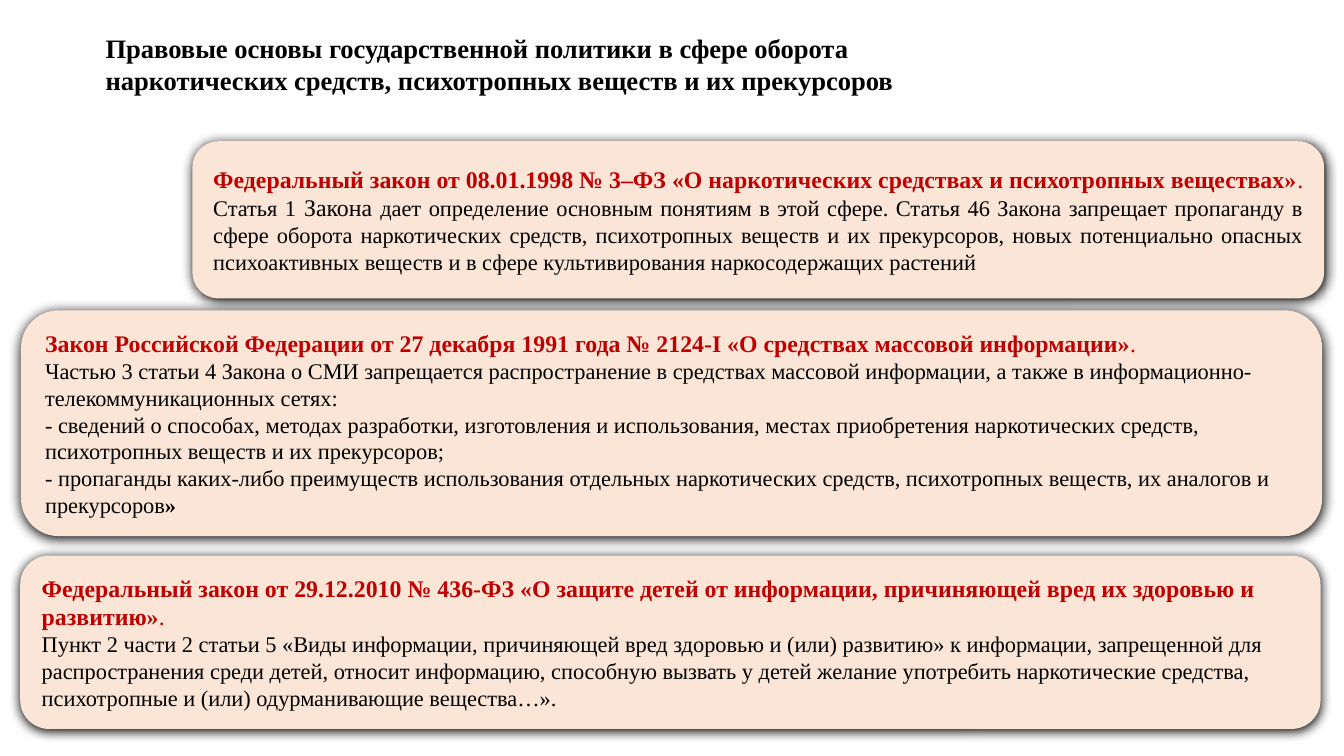
from dataclasses import dataclass

from lxml import etree
from pptx import Presentation
from pptx import util as u
from pptx.dml.color import RGBColor
from pptx.enum import shapes, text
from pptx.oxml import ns

BLACK = RGBColor(0x00, 0x00, 0x00)
RED = RGBColor(0xC0, 0x00, 0x00)
PEACH = RGBColor(0xFB, 0xE5, 0xD6)
FONT = "Times New Roman"
HEAD, BODY = 17, 16


@dataclass
class Run:
    words: str
    size: float = BODY
    color: RGBColor = BLACK
    bold: bool = False


@dataclass
class Card:
    left: float
    top: float
    width: float
    height: float
    paras: list[list[Run]]
    align: text.PP_ALIGN = text.PP_ALIGN.LEFT


def law(name: str, end: str = ".") -> list[Run]:
    return [Run(name, HEAD, RED, True), Run(end, HEAD, RED)]


CARDS = [
    Card(4.85, 3.56, 28.52, 3.96, [
        law("Федеральный закон от 08.01.1998 № 3–ФЗ «О наркотических средствах "
            "и психотропных веществах»", ". ")
        + [Run("Статья 1"),
           Run(" ", HEAD, RED, True),
           Run("Закона ", HEAD),
           Run("дает определение основным понятиям в этой сфере. Статья 46 Закона "
               "запрещает пропаганду в сфере оборота наркотических средств, "
               "психотропных веществ и их прекурсоров, новых потенциально опасных "
               "психоактивных веществ и в сфере культивирования "
               "наркосодержащих растений")],
    ], text.PP_ALIGN.JUSTIFY),
    Card(0.53, 7.82, 32.79, 5.69, [
        law("Закон Российской Федерации от 27 декабря 1991 года № 2124-I "
            "«О средствах массовой информации»"),
        [Run("Частью 3 статьи 4 Закона о СМИ запрещается распространение в средствах "
             "массовой информации, а также в "
             "информационно-телекоммуникационных сетях:")],
        [Run("- сведений о способах, методах разработки, изготовления и "
             "использования, местах приобретения наркотических средств, "
             "психотропных веществ и их прекурсоров;")],
        [Run("- пропаганды каких-либо преимуществ использования отдельных "
             "наркотических средств, психотропных веществ, их аналогов и "
             "прекурсоров"),
         Run("»", bold=True)],
    ]),
    Card(0.51, 14, 32.77, 4.37, [
        law("Федеральный закон от 29.12.2010 № 436-ФЗ «О защите детей от информации, "
            "причиняющей вред их здоровью и развитию»"),
        [Run("Пункт 2 части 2 статьи 5 «Виды информации, причиняющей вред здоровью "
             "и (или) развитию» к информации, запрещенной для распространения среди "
             "детей, относит информацию, способную вызвать у детей желание употребить "
             "наркотические средства, психотропные и (или) одурманивающие "
             "вещества…».")],
    ]),
]


def write(frame, paras: list[list[Run]], *, align=text.PP_ALIGN.LEFT,
          pad: tuple[float, float] = (0.25, 0.13)) -> None:
    frame.word_wrap = True
    frame.vertical_anchor = text.MSO_ANCHOR.MIDDLE
    frame.margin_left = frame.margin_right = u.Cm(pad[0])
    frame.margin_top = frame.margin_bottom = u.Cm(pad[1])
    for i, runs in enumerate(paras):
        para = frame.paragraphs[0] if i == 0 else frame.add_paragraph()
        para.alignment = align
        para.line_spacing = 1.0
        para.space_before = u.Pt(0)
        for item in runs:
            for j, line in enumerate(item.words.split("\n")):
                if j:
                    para.add_line_break()
                run = para.add_run()
                run.text = line
                run.font.name = FONT
                run.font.size = u.Pt(item.size)
                run.font.bold = item.bold
                run.font.color.rgb = item.color


def shade(shape) -> None:
    shape.shadow.inherit = False
    effects = shape._element.spPr.find(ns.qn("a:effectLst"))
    outer = etree.SubElement(effects, ns.qn("a:outerShdw"), blurRad=str(u.Pt(8.5)),
                             dist=str(u.Pt(1)), dir="5400000", rotWithShape="0")
    etree.SubElement(outer, ns.qn("a:srgbClr"), val=str(BLACK))


def draw(slide, card: Card) -> None:
    shape = slide.shapes.add_shape(
        shapes.MSO_SHAPE.ROUNDED_RECTANGLE,
        *map(u.Cm, (card.left, card.top, card.width, card.height)))
    shape.fill.solid()
    shape.fill.fore_color.rgb = PEACH
    shape.line.fill.background()
    shade(shape)
    write(shape.text_frame, card.paras, align=card.align, pad=(0.33, 0.18))


def main() -> None:
    deck = Presentation()
    deck.slide_width, deck.slide_height = u.Cm(33.87), u.Cm(19.05)
    slide = deck.slides.add_slide(deck.slide_layouts[5])

    # Title
    title = slide.shapes.title
    title.left, title.top, title.width, title.height = map(
        u.Cm, (2.41, 0.66, 23.7, 1.88))
    write(title.text_frame, [[Run(
        "Правовые основы государственной политики в сфере оборота\n"
        "наркотических средств, психотропных веществ и их прекурсоров",
        19, bold=True)]])

    # Laws
    for card in CARDS:
        draw(slide, card)

    deck.save("out.pptx")


if __name__ == "__main__":
    main()
